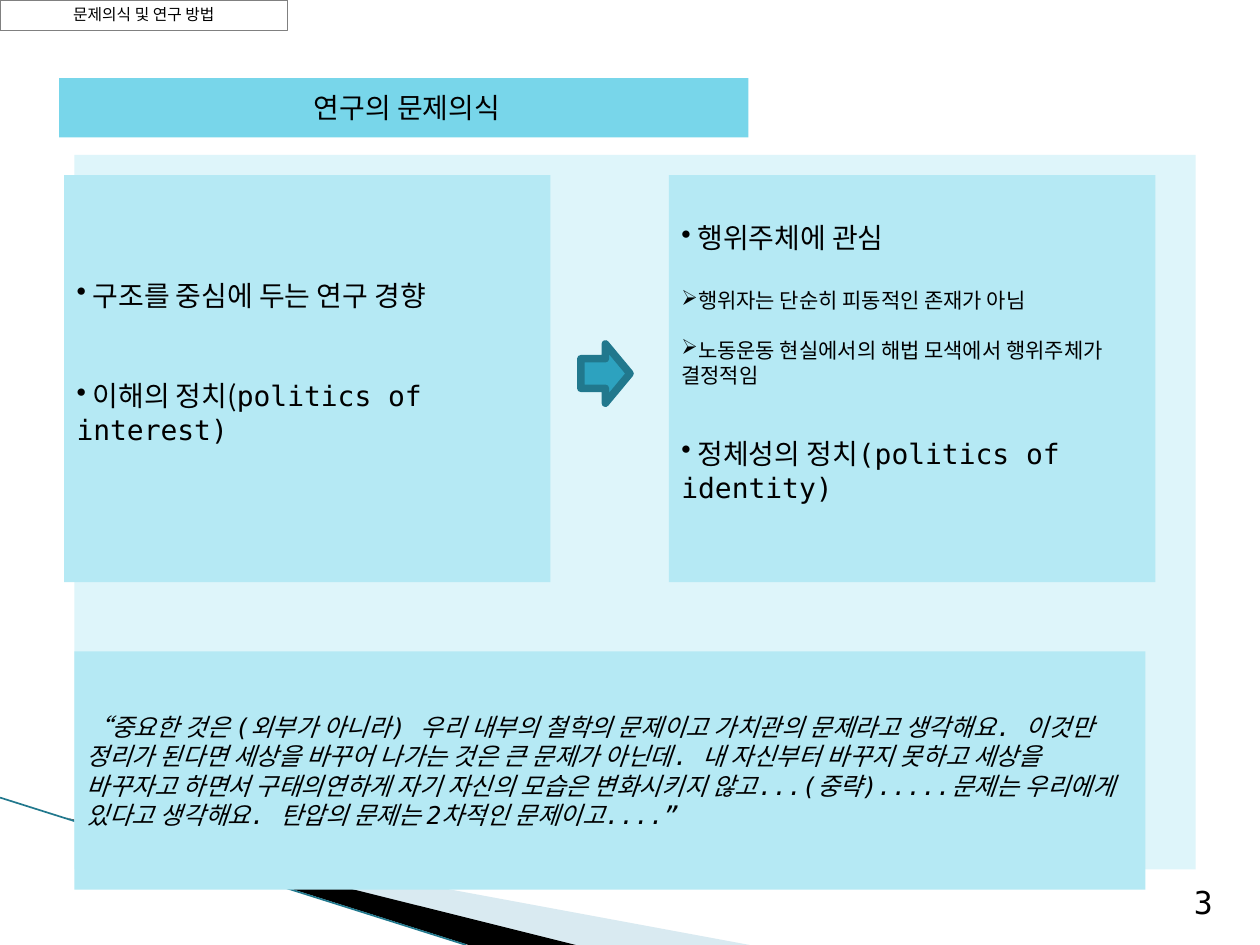
"""Build the slide on the research problem, from structure to agency."""
from dataclasses import dataclass

from lxml import etree
from pptx import Presentation
from pptx.dml.color import RGBColor
from pptx.enum.shapes import MSO_CONNECTOR, MSO_SHAPE
from pptx.enum.text import MSO_ANCHOR, PP_ALIGN
from pptx.oxml.ns import qn
from pptx.util import Inches, Pt

RECTANGLE = MSO_SHAPE.RECTANGLE
RIGHT_ARROW = MSO_SHAPE.RIGHT_ARROW
STRAIGHT = MSO_CONNECTOR.STRAIGHT
MIDDLE = MSO_ANCHOR.MIDDLE
LEFT, CENTER = PP_ALIGN.LEFT, PP_ALIGN.CENTER


@dataclass(frozen=True)
class Theme:
    korean: str = "Noto Sans CJK KR"
    mono: str = "DejaVu Sans Mono"
    black: RGBColor = RGBColor.from_string("000000")
    white: RGBColor = RGBColor.from_string("FFFFFF")
    gray: RGBColor = RGBColor.from_string("808080")
    swoosh: RGBColor = RGBColor.from_string("A0CBDC")
    title: RGBColor = RGBColor.from_string("78D6EA")
    backdrop: RGBColor = RGBColor.from_string("DEF5FA")
    panel: RGBColor = RGBColor.from_string("B5E9F4")
    arrow: RGBColor = RGBColor.from_string("2DA2BF")
    outline: RGBColor = RGBColor.from_string("21788D")
    number_size: int = 18
    body_size: int = 16
    quote_size: int = 14
    detail_size: int = 12
    label_size: int = 9


theme = Theme()


def add_box(page, kind, place, fill, line=None, width=0):
    box = page.shapes.add_shape(kind, *[Inches(length) for length in place])
    box.shadow.inherit = False
    box.fill.solid()
    box.fill.fore_color.rgb = fill
    if line is None:
        box.line.fill.background()
    else:
        box.line.color.rgb = line
        box.line.width = Pt(width)
    box.text_frame.word_wrap = True
    box.text_frame.vertical_anchor = MIDDLE
    return box


def add_span(para, text, size, font=theme.korean, italic=False):
    span = para.add_run()
    span.text = text
    span.font.size = Pt(size)
    span.font.name = font
    span.font.italic = italic
    span.font.color.rgb = theme.black
    east_asian = etree.SubElement(span.font._element, qn("a:ea"))
    east_asian.set("typeface", theme.korean)


deck = Presentation()
deck.slide_width, deck.slide_height = Inches(10), Inches(7.5)
page = deck.slides.add_slide(deck.slide_layouts[6])

swooshes = [
    ([(0.55, 6.5), (5.95, 7.5), (4.56, 7.5)], theme.swoosh, 40),
    ([(0.53, 6.49), (4.57, 7.5), (3.72, 7.5)], theme.black, 100),
]
for points, color, opacity in swooshes:
    corners = [(Inches(x), Inches(y)) for x, y in points]
    builder = page.shapes.build_freeform(*corners[0])
    builder.add_line_segments(corners[1:], close=True)
    swoosh = builder.convert_to_shape()
    swoosh.shadow.inherit = False
    swoosh.line.fill.background()
    swoosh.fill.solid()
    swoosh.fill.fore_color.rgb = color
    tint = swoosh._element.spPr.find(f".//{qn('a:srgbClr')}")
    etree.SubElement(tint, qn("a:alpha")).set("val", str(opacity * 1000))

edge = page.shapes.add_connector(
    STRAIGHT, Inches(0), Inches(6.33), Inches(3.7), Inches(7.5))
edge.line.color.rgb = theme.outline
edge.line.width = Pt(0.95)
etree.SubElement(edge._element.spPr, qn("a:effectLst"))

number = page.shapes.add_textbox(
    Inches(9.25), Inches(6.9), Inches(0.6), Inches(0.51))
number.text_frame.word_wrap = True
number.text_frame.vertical_anchor = MIDDLE
para = number.text_frame.paragraphs[0]
para.alignment = CENTER
add_span(para, "3", theme.number_size, theme.mono)

title = add_box(page, RECTANGLE, (0.47, 0.62, 5.47, 0.47), theme.title)
para = title.text_frame.paragraphs[0]
para.alignment = CENTER
add_span(para, " 연구의 문제의식", theme.body_size)

add_box(page, RECTANGLE, (0.59, 1.23, 8.9, 5.67), theme.backdrop)

body, detail = theme.body_size, theme.detail_size
panels = [
    (0.51, [
        ("•", body, 0, [(" 구조를 중심에 두는 연구 경향", theme.korean)]),
        ("•", body, 38, [(" 이해의 정치(", theme.korean),
                         ("politics of interest)", theme.mono)]),
    ]),
    (5.31, [
        ("•", body, 0, [(" 행위주체에 관심", theme.korean)]),
        ("➢", detail, 19, [("행위자는 단순히 피동적인 존재가 아님", theme.korean)]),
        ("➢", detail, 14, [("노동운동 현실에서의 해법 모색에서 행위주체가 결정적임",
                            theme.korean)]),
        ("•", body, 28, [(" 정체성의 정치", theme.korean),
                         ("(politics of identity)", theme.mono)]),
    ]),
]
for left, points in panels:
    panel = add_box(page, RECTANGLE, (left, 1.39, 3.86, 3.23), theme.panel)
    frame = panel.text_frame
    frame.margin_bottom = Inches(0.31)
    for index, (mark, size, gap, spans) in enumerate(points):
        para = frame.add_paragraph() if index else frame.paragraphs[0]
        para.alignment = LEFT
        properties = para._p.get_or_add_pPr()
        etree.SubElement(properties, qn("a:buChar")).set("char", mark)
        if gap:
            para.space_before = Pt(gap)
        for text, font in spans:
            add_span(para, text, size, font)

quote = add_box(page, RECTANGLE, (0.59, 5.17, 8.5, 1.89), theme.panel)
para = quote.text_frame.paragraphs[0]
para.alignment = LEFT
add_span(
    para,
    "“중요한 것은 (외부가 아니라) 우리 내부의 철학의 문제이고 가치관의 문제라고 생각해요. "
    "이것만 정리가 된다면 세상을 바꾸어 나가는 것은 큰 문제가 아닌데. "
    "내 자신부터 바꾸지 못하고 세상을 바꾸자고 하면서 구태의연하게 자기 자신의 모습은 "
    "변화시키지 않고...(중략).....문제는 우리에게 있다고 생각해요. "
    "탄압의 문제는 2차적인 문제이고....”",
    theme.quote_size, theme.mono, italic=True)

label = add_box(
    page, RECTANGLE, (0, 0, 2.28, 0.24), theme.white, theme.gray, 0.75)
para = label.text_frame.paragraphs[0]
para.alignment = CENTER
para.line_spacing = 0.9
add_span(para, "문제의식 및 연구 방법", theme.label_size)

add_box(page, RIGHT_ARROW, (4.61, 2.73, 0.39, 0.47),
        theme.arrow, theme.outline, 4.33)

deck.save("out.pptx")
